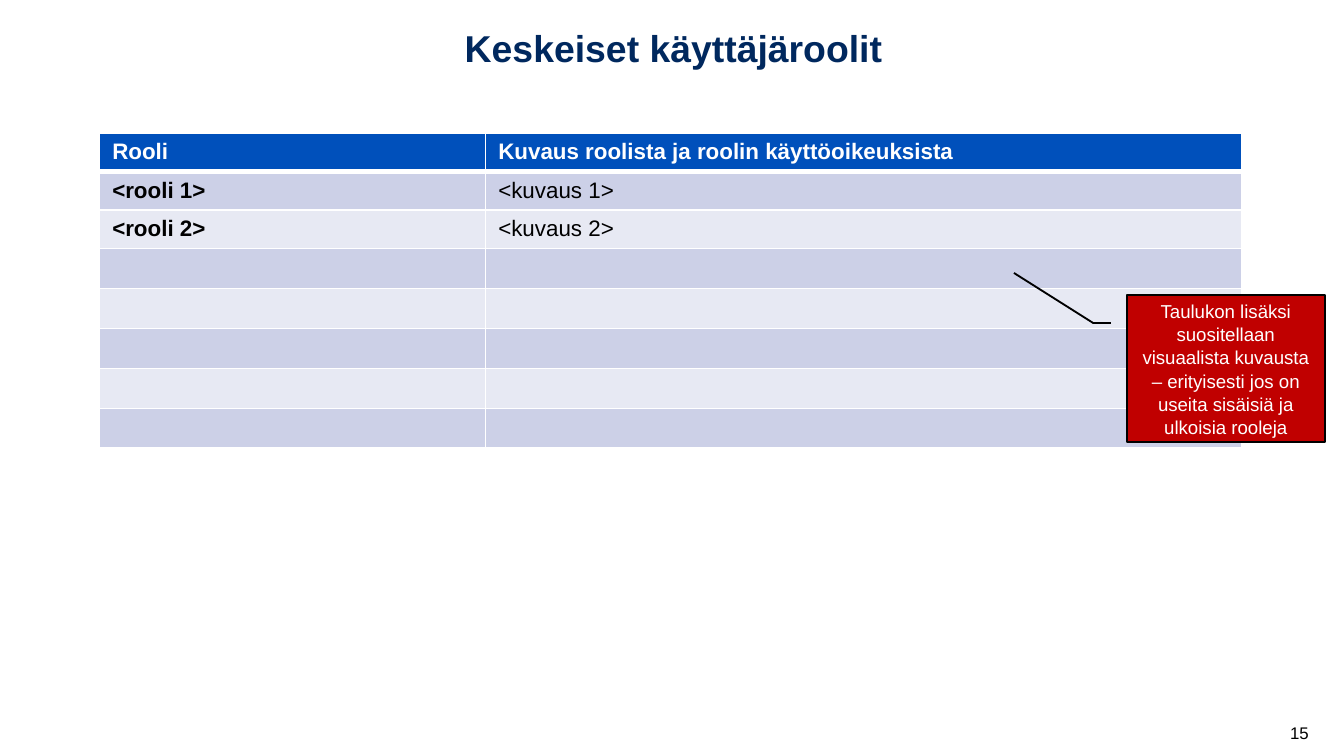
import pptx
import pptx.dml.color
import pptx.enum.shapes
import pptx.enum.text
import pptx.oxml
import pptx.oxml.ns
import pptx.util

Pt = pptx.util.Pt
ALIGN = pptx.enum.text.PP_ALIGN
ANCHOR = pptx.enum.text.MSO_ANCHOR

FONT = "Arial"
WHITE, BLACK, NAVY, RED = "FFFFFF", "000000", "00285E", "C00000"
HEADER_FILL = "0050BB"
BAND_FILLS = ("CCD0E7", "E7E9F3")
ROLES = [
    ("Rooli", "Kuvaus roolista ja roolin käyttöoikeuksista"),
    ("<rooli 1>", "<kuvaus 1>"),
    ("<rooli 2>", "<kuvaus 2>"),
] + [("", "")] * 5
COLUMN_WIDTHS = (206.8, 405.2)
ROW_HEIGHT = 20.6


def color(value):
    return pptx.dml.color.RGBColor.from_string(value)


def write_text(frame, text, size=12, fill=BLACK, bold=False,
               align=ALIGN.LEFT, anchor=ANCHOR.TOP, spacing=None):
    frame.word_wrap = True
    frame.vertical_anchor = anchor
    paragraph = frame.paragraphs[0]
    paragraph.alignment = align
    paragraph.line_spacing = spacing
    run = paragraph.add_run()
    run.text = text
    run.font.name = FONT
    run.font.size = Pt(size)
    run.font.bold = bold
    run.font.color.rgb = color(fill)


def add_text(slide, box, text, **text_format):
    shape = slide.shapes.add_textbox(*map(Pt, box))
    write_text(shape.text_frame, text, **text_format)


def set_borders(cell, bottom_width):
    """Draw white cell borders; they must come before the fill in the XML."""
    properties = cell._tc.get_or_add_tcPr()
    widths = {"lnL": 1, "lnR": 1, "lnT": 1, "lnB": bottom_width}
    for tag, width in widths.items():
        properties.append(pptx.oxml.parse_xml(
            f'<a:{tag} {pptx.oxml.ns.nsdecls("a")} w="{Pt(width)}"><a:solidFill>'
            f'<a:srgbClr val="{WHITE}"/></a:solidFill></a:{tag}>'))


def fill_cell(cell, text, row, column):
    is_header = row == 0
    cell.margin_left = cell.margin_right = Pt(6.75)
    cell.margin_top = cell.margin_bottom = Pt(3.38)
    set_borders(cell, 3 if is_header else 1)
    cell.fill.solid()
    cell.fill.fore_color.rgb = color(
        HEADER_FILL if is_header else BAND_FILLS[(row - 1) % 2])
    if text:
        write_text(cell.text_frame, text, fill=WHITE if is_header else BLACK,
                   bold=is_header or column == 0)
    else:
        # The end mark's size keeps an empty row low.
        paragraph = cell.text_frame.paragraphs[0]
        paragraph._p.get_or_add_endParaRPr().set("sz", "1200")


def add_role_table(slide, left, top):
    frame = slide.shapes.add_table(
        len(ROLES), len(COLUMN_WIDTHS), Pt(left), Pt(top),
        Pt(sum(COLUMN_WIDTHS)), Pt(ROW_HEIGHT * len(ROLES)))
    table = frame.table
    for column, width in zip(table.columns, COLUMN_WIDTHS):
        column.width = Pt(width)
    for row, texts in enumerate(ROLES):
        table.rows[row].height = Pt(ROW_HEIGHT)
        for column, text in enumerate(texts):
            fill_cell(table.cell(row, column), text, row, column)


def add_callout(slide, box, text, pointer, **text_format):
    """Add a box whose bent pointer is given as y, x pairs relative to it."""
    shape = slide.shapes.add_shape(
        pptx.enum.shapes.MSO_SHAPE.LINE_CALLOUT_2, *map(Pt, box))
    for index, value in enumerate(pointer):
        shape.adjustments[index] = value
    shape.shadow.inherit = False
    shape.fill.solid()
    shape.fill.fore_color.rgb = color(RED)
    shape.line.color.rgb = color(BLACK)
    shape.line.width = Pt(1)
    write_text(shape.text_frame, text, **text_format)


def main():
    presentation = pptx.Presentation()
    presentation.slide_width = Pt(720)
    presentation.slide_height = Pt(405)
    slide = presentation.slides.add_slide(presentation.slide_layouts[6])

    add_role_table(slide, 53.4, 71.4)
    add_text(slide, (684, 381.6, 32.4, 21.6), "15", size=9, anchor=ANCHOR.MIDDLE)
    add_text(slide, (12.4, 10, 697, 53.3), "Keskeiset käyttäjäroolit",
             size=20, fill=NAVY, bold=True, align=ALIGN.CENTER)
    add_callout(
        slide, (603.6, 158.1, 106, 78.8),
        "Taulukon lisäksi suositellaan visuaalista kuvausta – "
        "erityisesti jos on useita sisäisiä ja ulkoisia rooleja",
        (0.19, -0.08, 0.19, -0.17, -0.15, -0.57),
        size=10, fill=WHITE, align=ALIGN.CENTER, anchor=ANCHOR.MIDDLE, spacing=1.04)

    presentation.save("out.pptx")


if __name__ == "__main__":
    main()
